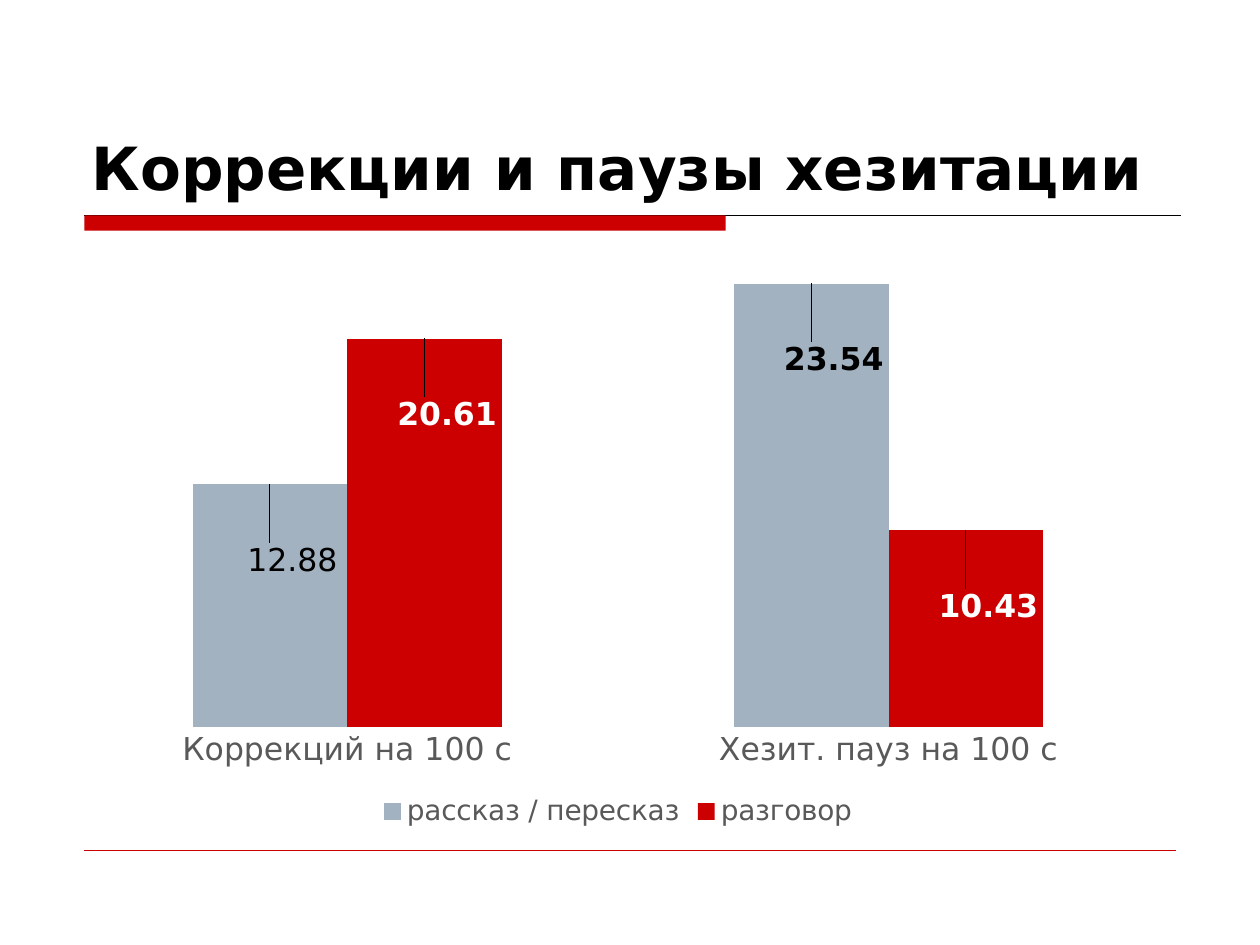
from lxml import etree
from pptx import Presentation
from pptx.chart.data import CategoryChartData
from pptx.dml.color import RGBColor
from pptx.enum import chart as ch, shapes, text
from pptx.oxml import parse_xml
from pptx.oxml.ns import nsdecls, qn
from pptx.util import Inches, Pt

FONT = "DejaVu Sans"
BLACK, WHITE, GREY, RED, BLUE = "000000", "FFFFFF", "595959", "CC0000", "A3B2C1"

TITLE = "Коррекции и паузы хезитации"
CATEGORIES = ["Коррекций на 100 с", "Хезит. пауз на 100 с"]
SERIES = [  # name, values, fill, label colour, bold label per point
    ("рассказ / пересказ", (12.88, 23.54), BLUE, BLACK, (False, True)),
    ("разговор", (20.61, 10.43), RED, WHITE, (True, True)),
]
LABEL_SHIFT = {"x": 0.02, "y": 0.09}
PLOT_AREA = {"layoutTarget": "inner", "xMode": "edge", "yMode": "edge",
             "x": 0.02, "y": 0.02, "w": 0.96, "h": 0.8}
LEFT, RULE_Y = 0.67, 1.71


def rgb(color):
    return RGBColor.from_string(color)


def set_font(font, size, color=BLACK, bold=False):
    font.name, font.size, font.bold = FONT, Pt(size), bold
    font.color.rgb = rgb(color)


def add_text(s, content, box, size, color=BLACK, bold=False,
             anchor=text.MSO_ANCHOR.TOP):
    tf = s.shapes.add_textbox(*map(Inches, box)).text_frame
    tf.word_wrap = True
    tf.vertical_anchor = anchor
    r = tf.paragraphs[0].add_run()
    r.text = content
    set_font(r.font, size, color, bold)


def add_rule(s, right, y, color, width):
    line = s.shapes.add_connector(shapes.MSO_CONNECTOR.STRAIGHT,
                                  *map(Inches, (LEFT, y, right, y)))
    line.line.color.rgb = rgb(color)
    line.line.width = Pt(width)
    etree.SubElement(line._element.spPr, qn("a:effectLst"))


def manual_layout(values):
    items = "".join(f'<c:{k} val="{v}"/>' for k, v in values.items())
    return parse_xml(f'<c:layout {nsdecls("c")}><c:manualLayout>{items}'
                     '</c:manualLayout></c:layout>')


def add_bars(s, box):
    data = CategoryChartData()
    data.categories = CATEGORIES
    for name, values, *_ in SERIES:
        data.add_series(name, values)
    chart = s.shapes.add_chart(ch.XL_CHART_TYPE.COLUMN_CLUSTERED,
                               *map(Inches, box), data).chart
    set_font(chart.font, 10)
    chart.has_title = False
    chart.has_legend = True
    chart.legend.position = ch.XL_LEGEND_POSITION.BOTTOM
    chart.legend.include_in_layout = False
    set_font(chart.legend.font, 16, GREY)

    axis = chart.category_axis
    axis.major_tick_mark = ch.XL_TICK_MARK.NONE
    axis.format.line.fill.background()
    set_font(axis.tick_labels.font, 18, GREY)
    values_axis = chart.value_axis
    values_axis.visible = False
    values_axis.has_major_gridlines = False
    values_axis.minimum_scale, values_axis.maximum_scale = 0, 25

    plot = chart.plots[0]
    plot.gap_width, plot.overlap, plot.vary_by_categories = 150, 0, False
    for series, (_, _, fill, color, bolds) in zip(plot.series, SERIES):
        series.format.fill.solid()
        series.format.fill.fore_color.rgb = rgb(fill)
        series.data_labels.show_value = True
        set_font(series.data_labels.font, 18, color, True)
        for i, bold in enumerate(bolds):
            label = series.points[i].data_label
            set_font(label.font, 18, color, bold)
            label.position = ch.XL_LABEL_POSITION.INSIDE_END
        for idx in series._element.findall(f'.//{qn("c:dLbl")}/{qn("c:idx")}'):
            idx.addnext(manual_layout(LABEL_SHIFT))

    area = chart._chartSpace.find(f'.//{qn("c:plotArea")}')
    for old in area.findall(qn("c:layout")):
        area.remove(old)
    area.insert(0, manual_layout(PLOT_AREA))


def main():
    prs = Presentation()
    prs.slide_width, prs.slide_height = Inches(10), Inches(7.5)
    s = prs.slides.add_slide(prs.slide_layouts[6])

    add_rule(s, 9.37, RULE_Y, BLACK, 0.75)
    bar = s.shapes.add_shape(shapes.MSO_SHAPE.RECTANGLE,
                             *map(Inches, (LEFT, RULE_Y, 5.09, 0.12)))
    bar.shadow.inherit = False
    bar.fill.solid()
    bar.fill.fore_color.rgb = rgb(RED)
    bar.line.fill.background()
    add_rule(s, 9.33, 6.75, RED, 0.25)

    add_text(s, TITLE, (0.63, 0.33, 8.75, 1.33), 34, bold=True,
             anchor=text.MSO_ANCHOR.BOTTOM)
    add_bars(s, (0.43, 1.94, 8.95, 4.67))
    prs.save("out.pptx")


if __name__ == "__main__":
    main()
